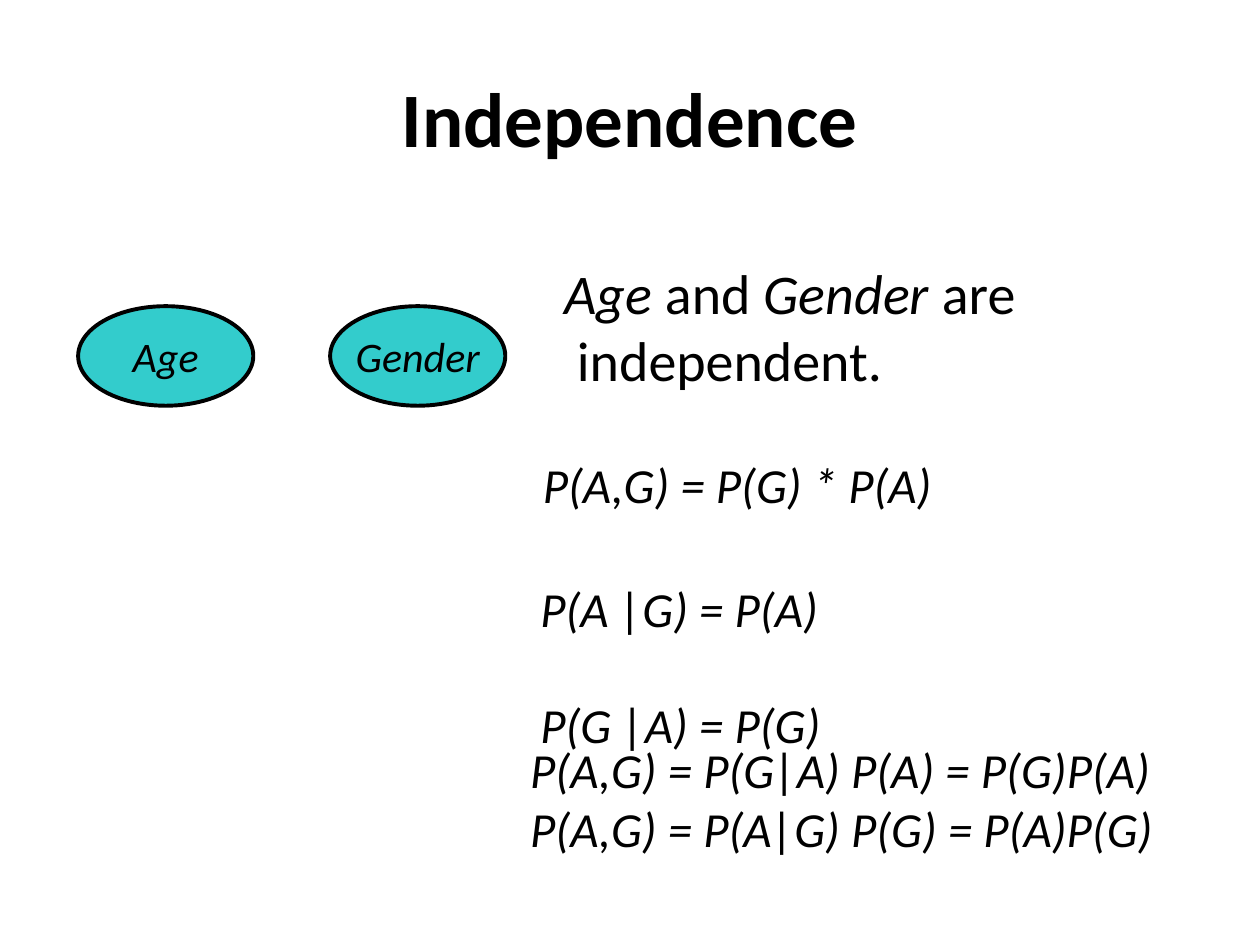
import pptx
import pptx.util
import pptx.dml.color
import pptx.enum.shapes
import pptx.enum.text

HUES = {"ink": "000000", "node": "33CCCC"}
WIDE, HIGH = 10, 7.5
MID = pptx.enum.text.MSO_ANCHOR.MIDDLE
CENTER = pptx.enum.text.PP_ALIGN.CENTER


def hue(name):
    return pptx.dml.color.RGBColor.from_string(HUES[name])


class Deck:
    font = "Calibri"

    def __init__(self):
        self.file = pptx.Presentation()
        self.file.slide_width = pptx.util.Inches(WIDE)
        self.file.slide_height = pptx.util.Inches(HIGH)
        self.slide = self.file.slides.add_slide(self.file.slide_layouts[6])

    def place(self, left, top, wide, high):
        w, h = self.file.slide_width, self.file.slide_height
        return [round(n) for n in (left * w, top * h, wide * w, high * h)]

    def style(self, run, size, bold=False, slant=False):
        font = run.font
        font.name, font.size = self.font, pptx.util.Pt(size)
        font.bold, font.italic = bold, slant
        font.color.rgb = hue("ink")

    def text(self, area, lines, size, bold=False, gap=0, inset=0):
        frame = self.slide.shapes.add_textbox(*self.place(*area)).text_frame
        frame.word_wrap = True
        for i, line in enumerate(lines):
            para = frame.add_paragraph() if i else frame.paragraphs[0]
            if i and gap:
                para.space_before = pptx.util.Pt(gap)
            if i and inset:
                para._p.get_or_add_pPr().set("marL", str(pptx.util.Inches(inset)))
            for part, slant in line:
                run = para.add_run()
                run.text = part
                self.style(run, size, bold, slant)
        return frame

    def title(self, area, label):
        frame = self.text(area, [[(label, False)]], 44, bold=True)
        frame.vertical_anchor = MID
        frame.paragraphs[0].alignment = CENTER

    def maths(self, area, *lines, gap=0):
        self.text(area, [[(line, True)] for line in lines], 28, gap=gap)

    def node(self, area, label):
        oval = self.slide.shapes.add_shape(
            pptx.enum.shapes.MSO_SHAPE.OVAL, *self.place(*area))
        oval.shadow.inherit = False
        oval.fill.solid()
        oval.fill.fore_color.rgb = hue("node")
        oval.line.color.rgb = hue("ink")
        oval.line.width = pptx.util.Pt(2.25)
        frame = oval.text_frame
        frame.text = label
        frame.word_wrap = False
        frame.vertical_anchor = MID
        para = frame.paragraphs[0]
        para.alignment = CENTER
        self.style(para.runs[0], 24, slant=True)


def main():
    deck = Deck()
    deck.title((0.05, 0.3 / HIGH, 0.9, 1.25 / HIGH), "Independence")
    claim = [[("Age", True), (" and ", False), ("Gender", True), (" are", False)],
             [("independent.", False)]]
    deck.text((0.438, 2 / HIGH, 0.491, 1.18 / HIGH), claim, 32, inset=0.1)
    deck.maths((0.419, 4.54 / HIGH, 0.255, 1.04 / HIGH),
               "P(A |G) = P(A)", "P(G |A) = P(G)", gap=33)
    for i, label in enumerate(("Age", "Gender")):
        deck.node((0.062 + 0.2 * i, 2.43 / HIGH, 0.139, 0.79 / HIGH), label)
    deck.maths((0.411, 5.82 / HIGH, 0.527, 1.04 / HIGH),
               "P(A,G) = P(G|A) P(A) = P(G)P(A)",
               "P(A,G) = P(A|G) P(G) = P(A)P(G)")
    deck.maths((0.421, 3.56 / HIGH, 0.334, 0.57 / HIGH), "P(A,G) = P(G) * P(A)")
    deck.file.save("out.pptx")


if __name__ == "__main__":
    main()
